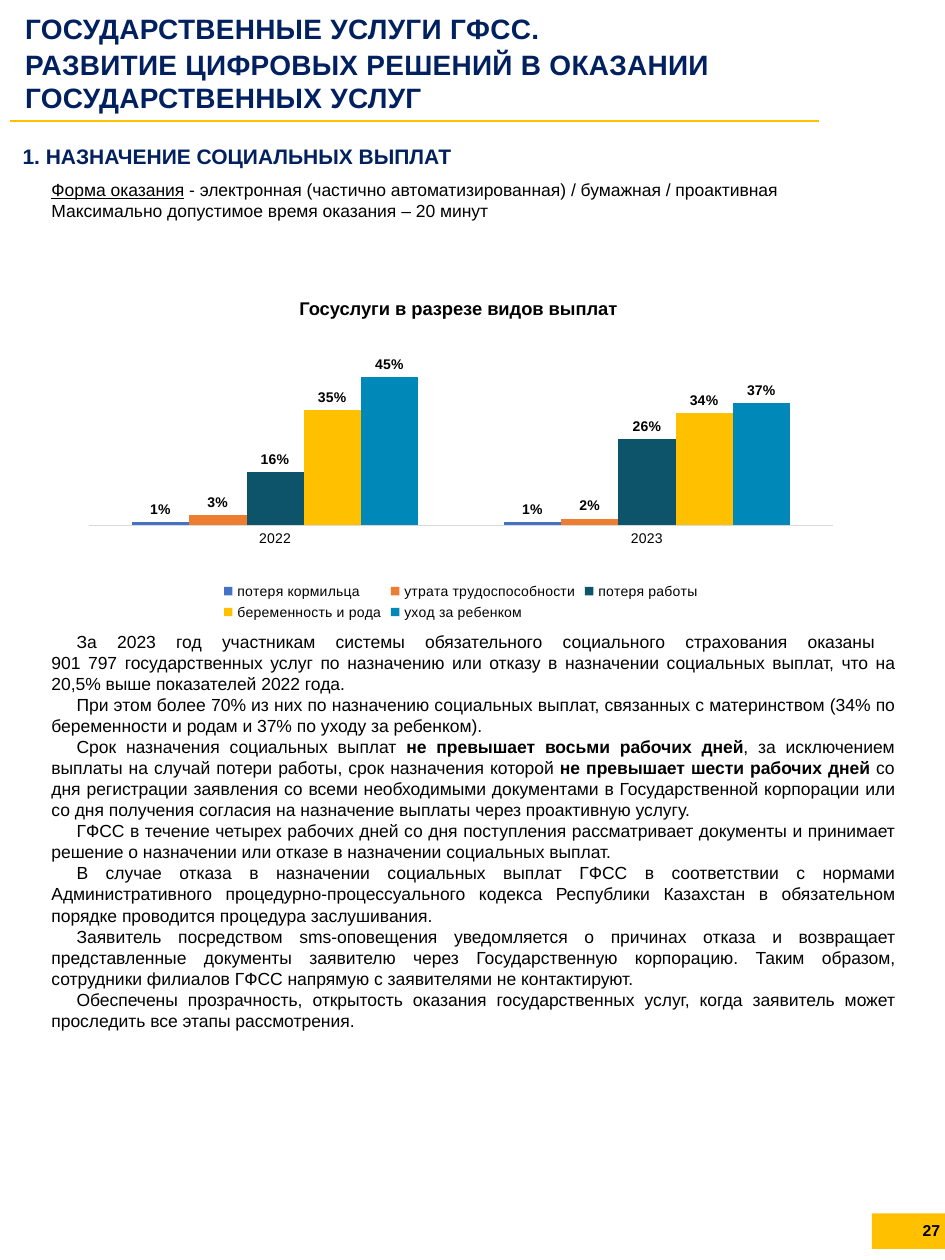
from pptx import Presentation
from pptx.chart.data import CategoryChartData
from pptx.dml.color import RGBColor
from pptx.enum.chart import XL_CHART_TYPE as ChartType, XL_LABEL_POSITION as LabelPos
from pptx.enum.chart import XL_LEGEND_POSITION as LegendPos, XL_TICK_MARK as Tick
from pptx.enum.shapes import MSO_CONNECTOR as Connector, MSO_SHAPE as Shape
from pptx.enum.text import MSO_ANCHOR as Anchor, MSO_AUTO_SIZE as AutoSize, PP_ALIGN as Align
from pptx.oxml import parse_xml
from pptx.oxml.ns import qn
from pptx.util import Pt
from lxml import etree

NAVY, GOLD, BLACK = "002060", "FFC000", "000000"
rgb = RGBColor.from_string


def style(font, size, color=BLACK, bold=None):
    font.name, font.size, font.bold = "Arial", Pt(size), bold
    font.color.rgb = rgb(color)


def add_text(box, paragraphs, size, color=BLACK, bold=None, align=Align.LEFT, indent=0):
    left, top, width, height = map(Pt, box)
    frame = slide.shapes.add_textbox(left, top, width, height).text_frame
    frame.word_wrap = True
    for number, parts in enumerate(paragraphs):
        paragraph = frame.paragraphs[0] if number == 0 else frame.add_paragraph()
        paragraph.alignment = align
        style(paragraph.font, size, color, bold)
        if indent:
            paragraph._p.get_or_add_pPr().set("indent", str(Pt(indent)))
        for position, part in enumerate(parts.split("**")):
            for row, line in enumerate(part.split("\n")):
                if row:
                    paragraph.add_line_break()
                run = paragraph.add_run()
                run.text = line
                if position % 2:
                    run.font.bold = True
    return frame


prs = Presentation()
prs.slide_width, prs.slide_height = Pt(540), Pt(720)
slide = prs.slides.add_slide(prs.slide_layouts[5])

title = slide.shapes.title
title.left, title.top, title.width, title.height = Pt(13), Pt(5), Pt(521), Pt(60.5)
heading = title.text_frame
heading.text = "ГОСУДАРСТВЕННЫЕ УСЛУГИ ГФСС.\nРАЗВИТИЕ ЦИФРОВЫХ РЕШЕНИЙ В ОКАЗАНИИ ГОСУДАРСТВЕННЫХ УСЛУГ"
heading.word_wrap, heading.auto_size = True, AutoSize.NONE
heading.vertical_anchor = Anchor.TOP
heading.margin_left = heading.margin_right = heading.margin_bottom = 0
heading.margin_top = Pt(1.4)
for paragraph in heading.paragraphs:
    paragraph.alignment = Align.LEFT
    paragraph.space_before = Pt(1.3)
    style(paragraph.font, 16, NAVY, True)
    paragraph._p.get_or_add_pPr().set("marL", str(Pt(1.3)))
    paragraph.runs[0].font._element.set("spc", "20")

service_form = add_text((22.3, 98.6, 439, 31.7), [
    "Форма оказания** - электронная (частично автоматизированная) / бумажная / проактивная",
    "Максимально допустимое время оказания – 20 минут ",
], 10, align=Align.JUSTIFY)
form_name, form_kinds = service_form.paragraphs[0].runs
form_name.font.underline = True
form_kinds.font.bold = False

payments = [
    ("потеря кормильца", (0.01, 0.01), "4472C4"),
    ("утрата трудоспособности", (0.03, 0.02), "ED7D31"),
    ("потеря работы", (0.16, 0.26), "0D5369"),
    ("беременность и рода", (0.35, 0.34), GOLD),
    ("уход за ребенком", (0.45, 0.37), "0088B8"),
]
shares = CategoryChartData(number_format="0%")
shares.categories = ["2022", "2023"]
for name, values, color in payments:
    shares.add_series(name, values)
chart = slide.shapes.add_chart(
    ChartType.COLUMN_CLUSTERED, Pt(37.4), Pt(194.4), Pt(452.2), Pt(162.7), shares).chart
chart.has_title = False
style(chart.font, 8)
chart.has_legend = True
chart.legend.position = LegendPos.BOTTOM
chart.legend.include_in_layout = False
style(chart.legend.font, 8)

columns = chart.plots[0]
columns.gap_width, columns.overlap = 150, 0
columns.vary_by_categories = False
for series, (name, values, color) in zip(columns.series, payments):
    series.format.fill.solid()
    series.format.fill.fore_color.rgb = rgb(color)
    labels = series.data_labels
    labels.show_value = True
    labels.position = LabelPos.OUTSIDE_END
    labels.number_format, labels.number_format_is_linked = "0%", False
    style(labels.font, 8, bold=True)

years, percents = chart.category_axis, chart.value_axis
years.major_tick_mark = Tick.NONE
years.format.line.color.rgb = rgb("D9D9D9")
years.format.line.width = Pt(0.75)
style(years.tick_labels.font, 8)
percents.visible = False
percents.has_major_gridlines = False
percents.minimum_scale, percents.maximum_scale = 0, 0.5

plot_area = chart._chartSpace.chart.plotArea
for old in plot_area.findall(qn("c:layout")):
    plot_area.remove(old)
plot_area.insert(0, parse_xml(
    '<c:layout xmlns:c="http://schemas.openxmlformats.org/drawingml/2006/chart"><c:manualLayout>'
    '<c:layoutTarget val="inner"/><c:xMode val="edge"/><c:yMode val="edge"/>'
    '<c:x val="0.03"/><c:y val="0.07"/><c:w val="0.94"/><c:h val="0.58"/>'
    '</c:manualLayout></c:layout>'))

add_text((29.5, 166.3, 468, 20.2), ["Госуслуги в разрезе видов выплат "],
         10.5, bold=True, align=Align.CENTER)

add_text((22.3, 357.1, 496, 237.6), [
    "За 2023 год участникам системы обязательного социального страхования оказаны \n901 797 государственных услуг по назначению или отказу в назначении социальных выплат, что на 20,5% выше показателей 2022 года.",
    "При этом более 70% из них по назначению социальных выплат, связанных с материнством (34% по беременности и родам и 37% по уходу за ребенком).",
    "Срок назначения социальных выплат **не превышает восьми рабочих дней**, за исключением выплаты на случай потери работы, срок назначения которой **не превышает шести рабочих дней** со дня регистрации заявления со всеми необходимыми документами в Государственной корпорации или со дня получения согласия на назначение выплаты через проактивную услугу. ",
    "ГФСС в течение четырех рабочих дней со дня поступления рассматривает документы и принимает решение о назначении или отказе в назначении социальных выплат. ",
    "В случае отказа в назначении социальных выплат ГФСС в соответствии с нормами Административного процедурно-процессуального кодекса Республики Казахстан в обязательном порядке проводится процедура заслушивания.",
    "Заявитель посредством sms-оповещения уведомляется о причинах отказа и возвращает представленные документы заявителю через Государственную корпорацию. Таким образом, сотрудники филиалов ГФСС напрямую с заявителями не контактируют.",
    "Обеспечены прозрачность, открытость оказания государственных услуг, когда заявитель может проследить все этапы рассмотрения.",
], 10, align=Align.JUSTIFY, indent=14.4)

add_text((5.8, 78.5, 521, 21.6), ["1. НАЗНАЧЕНИЕ СОЦИАЛЬНЫХ ВЫПЛАТ"], 12, NAVY, True)

divider = slide.shapes.add_connector(Connector.STRAIGHT, Pt(5.8), Pt(69.1), Pt(468), Pt(69.1))
divider.line.color.rgb = rgb(GOLD)
divider.line.width = Pt(1.5)
etree.SubElement(divider._element.spPr, qn("a:effectLst"))

page_tab = slide.shapes.add_shape(Shape.RECTANGLE, Pt(498.2), Pt(693.4), Pt(42.5), Pt(20.2))
page_tab.shadow.inherit = False
page_tab.fill.solid()
page_tab.fill.fore_color.rgb = rgb(GOLD)
page_tab.line.fill.background()

page_number = add_text((422.6, 684, 121.7, 38.2), ["27"], 9, bold=True, align=Align.RIGHT)
page_number.vertical_anchor = Anchor.MIDDLE

prs.save("out.pptx")
